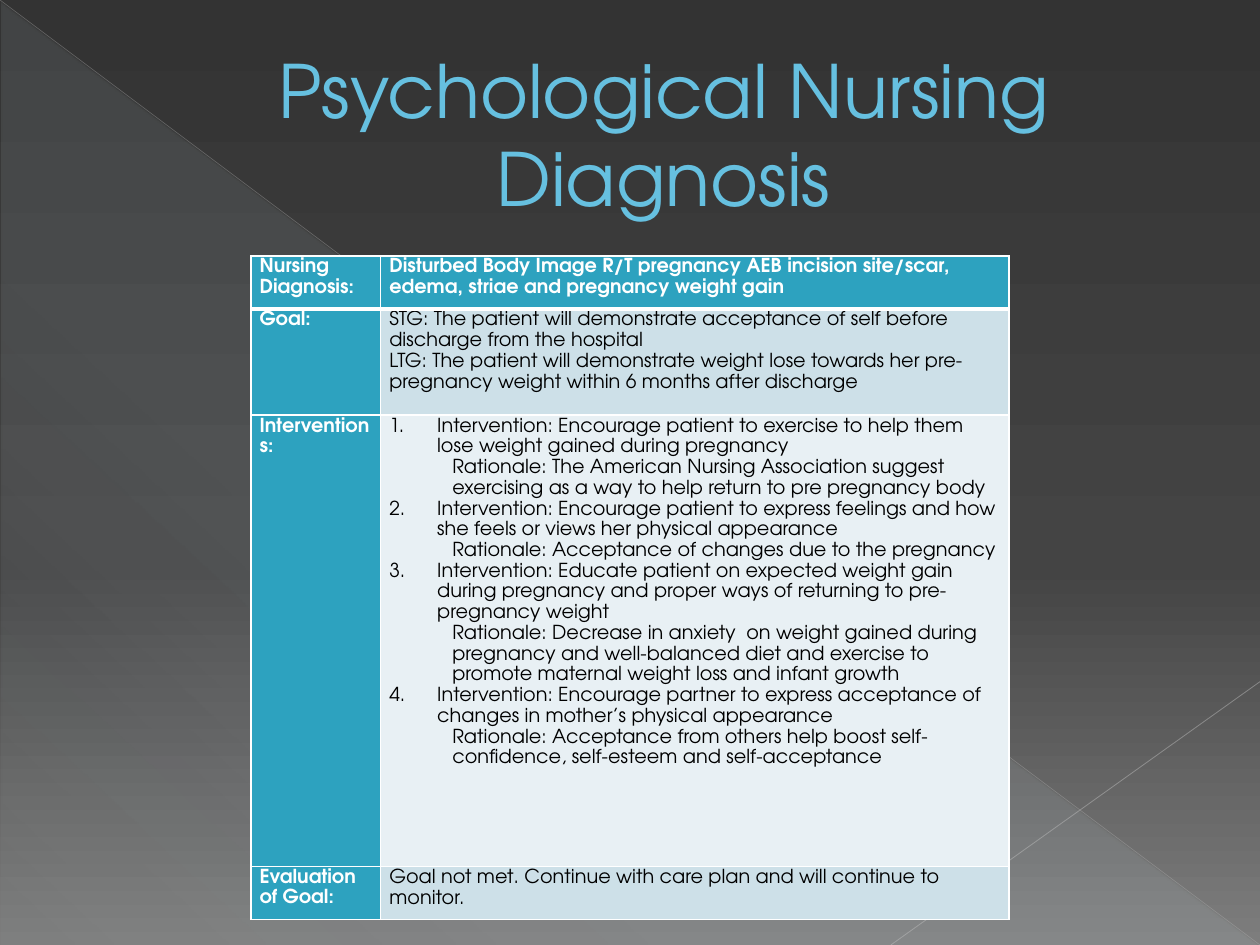
from dataclasses import dataclass

from lxml import etree
from pptx import Presentation
from pptx import util as u
from pptx.dml.color import RGBColor
from pptx.enum import shapes, text
from pptx.oxml.ns import qn

WIDTH, HEIGHT = 10, 7.5
FONT = "TeX Gyre Adventor"
WHITE = RGBColor(0xFF, 0xFF, 0xFF)
BLACK = RGBColor(0, 0, 0)
TITLE_BLUE = RGBColor(0x66, 0xC0, 0xE0)
TEAL = RGBColor(0x2D, 0xA2, 0xBF)
BAND_DARK = RGBColor(0xCD, 0xE0, 0xE8)
BAND_LIGHT = RGBColor(0xE8, 0xF0, 0xF4)
ICE = RGBColor(0xDE, 0xF5, 0xFA)
GREY_LONG = RGBColor(0xB9, 0xB9, 0xB9)
GREY_SHORT = RGBColor(0xC1, 0xC1, 0xC1)
BACKDROP = [RGBColor(0x33, 0x33, 0x33), RGBColor(0x44, 0x44, 0x44),
            RGBColor(0x7D, 0x7D, 0x7D)]
COLUMNS = (1.03, 4.99)


@dataclass
class Stop:
    place: int
    color: RGBColor
    opacity: int = 100


@dataclass
class Ray:
    start: tuple[float, float]  # shares of the slide's width and height
    end: tuple[float, float]
    color: RGBColor
    weight: float
    opacity: int


@dataclass
class Line:
    words: str
    number: int = 0
    left: float = 0


@dataclass
class Row:
    label: list[str]
    lines: list[Line]
    height: float
    fill: RGBColor
    header: bool = False


def add_color(parent, color: RGBColor, opacity: int = 100) -> None:
    node = etree.SubElement(parent, qn("a:srgbClr"), val=str(color))
    if opacity < 100:
        etree.SubElement(node, qn("a:alpha"), val=str(opacity * 1000))


def set_gradient(properties, stops: list[Stop], angle: int) -> None:
    """Replace the solid fill in the properties by a linear gradient."""
    gradient = etree.Element(qn("a:gradFill"), rotWithShape="1")
    listing = etree.SubElement(gradient, qn("a:gsLst"))
    for stop in stops:
        node = etree.SubElement(listing, qn("a:gs"), pos=str(stop.place * 1000))
        add_color(node, stop.color, stop.opacity)
    etree.SubElement(gradient, qn("a:lin"), ang=str(angle * 60000), scaled="0")
    properties.replace(properties.find(qn("a:solidFill")), gradient)


def style(para, size: float, color: RGBColor, bold: bool = False) -> None:
    for span in para.runs:
        span.font.name, span.font.size, span.font.bold = FONT, u.Pt(size), bold
        span.font.color.rgb = color


def draw_ray(page, ray: Ray) -> None:
    ends = [u.Inches(share * side) for point in (ray.start, ray.end)
            for share, side in zip(point, (WIDTH, HEIGHT))]
    line = page.shapes.add_connector(shapes.MSO_CONNECTOR.STRAIGHT, *ends)
    line.line.color.rgb, line.line.width = ray.color, u.Pt(ray.weight)
    properties = line._element.spPr
    color = properties.find(".//" + qn("a:srgbClr"))
    etree.SubElement(color, qn("a:alpha"), val=str(ray.opacity * 1000))
    etree.SubElement(properties, qn("a:effectLst"))


def fill_cell(cell, lines: list[Line], fill: RGBColor, color: RGBColor,
              bold: bool, header: bool) -> None:
    cell.margin_left = cell.margin_right = u.Inches(0.07)
    cell.margin_top = cell.margin_bottom = 0
    properties = cell._tc.get_or_add_tcPr()
    for side in "LRTB":
        weight = 3 if header and side == "B" else 1
        border = etree.SubElement(properties, qn("a:ln" + side), w=str(u.Pt(weight)))
        add_color(etree.SubElement(border, qn("a:solidFill")), WHITE)
    cell.fill.solid()
    cell.fill.fore_color.rgb = fill
    cell.text_frame.text = "\n".join(line.words for line in lines)
    for para, line in zip(cell.text_frame.paragraphs, lines):
        para.line_spacing = 1.15
        style(para, 11, color, bold)
        layout = para._p.get_or_add_pPr()
        layout.set("marL", str(u.Inches(line.left)))
        layout.set("indent", str(u.Inches(-line.left if line.number else 0)))
        if line.number:
            etree.SubElement(layout, qn("a:buFont"), typeface="+mj-lt")
            etree.SubElement(layout, qn("a:buAutoNum"), type="arabicPeriod",
                             startAt=str(line.number))


def draw_table(page, rows: list[Row]) -> None:
    frame = page.shapes.add_table(
        len(rows), len(COLUMNS), u.Inches(1.99), u.Inches(2.03),
        u.Inches(sum(COLUMNS)), u.Inches(sum(row.height for row in rows)))
    table = frame.table
    for column, width in zip(table.columns, COLUMNS):
        column.width = u.Inches(width)
    for index, row in enumerate(rows):
        table.rows[index].height = u.Inches(row.height)
        label = [Line(words) for words in row.label]
        fill_cell(table.cell(index, 0), label, TEAL, WHITE, True, row.header)
        fill_cell(table.cell(index, 1), row.lines, row.fill,
                  WHITE if row.header else BLACK, row.header, row.header)


CARE = [
    ("Encourage patient to exercise to help them lose weight gained during pregnancy",
     "The American Nursing Association suggest exercising as a way to help return "
     "to pre pregnancy body"),
    ("Encourage patient to express feelings and how she feels or views her physical "
     "appearance",
     "Acceptance of changes due to the pregnancy"),
    ("Educate patient on expected weight gain during pregnancy and proper ways of "
     "returning to pre-pregnancy weight",
     "Decrease in anxiety  on weight gained during pregnancy and well-balanced diet "
     "and exercise to promote maternal weight loss and infant growth"),
    ("Encourage partner to express acceptance of changes in mother’s physical appearance",
     "Acceptance from others help boost self-confidence, self-esteem and "
     "self-acceptance"),
]
INTERVENTIONS = [
    line for number, (action, reason) in enumerate(CARE, 1)
    for line in (Line("Intervention: " + action, number, 0.38),
                 Line("Rationale: " + reason, left=0.5))]
ROWS = [
    Row(["Nursing", "Diagnosis:"],
        [Line("Disturbed Body Image R/T pregnancy AEB incision site/scar, edema, "
              "striae and pregnancy weight gain")], 0.42, TEAL, header=True),
    Row(["Goal:"],
        [Line("STG: The patient will demonstrate acceptance of self before discharge "
              "from the hospital"),
         Line("LTG: The patient will demonstrate weight lose towards her pre-pregnancy "
              "weight within 6 months after discharge")], 0.83, BAND_DARK),
    Row(["Interventions:"], INTERVENTIONS, 3.33, BAND_LIGHT),
    Row(["Evaluation of Goal:"],
        [Line("Goal not met. Continue with care plan and will continue to monitor.")],
        0.42, BAND_DARK),
]
RAYS = [Ray((0, 0), (1, 1), GREY_LONG, 0.39, 35),
        Ray((1, 5.41 / HEIGHT), (7.07 / WIDTH, 1), GREY_SHORT, 0.47, 45)]


def main() -> None:
    deck = Presentation()
    deck.slide_width, deck.slide_height = u.Inches(WIDTH), u.Inches(HEIGHT)
    page = deck.slides.add_slide(deck.slide_layouts[6])

    # Backdrop: gradient, pale corner and two thin rays
    page.background.fill.solid()
    set_gradient(page._element.cSld.find(".//" + qn("p:bgPr")),
                 [Stop(*pair) for pair in zip((0, 60, 100), BACKDROP)], 90)
    corner = page.shapes.add_shape(
        shapes.MSO_SHAPE.RIGHT_TRIANGLE, u.Inches(0.01), u.Inches(0.02),
        u.Inches(9.98), u.Inches(7.48))
    corner.shadow.inherit = False
    corner.line.fill.background()
    corner.fill.solid()
    set_gradient(corner._element.spPr,
                 [Stop(0, ICE, 10), Stop(70, ICE, 8), Stop(100, ICE, 1)], 133)
    for ray in RAYS:
        draw_ray(page, ray)

    # Title
    box = page.shapes.add_textbox(u.Inches(0.5), u.Inches(0.29),
                                  u.Inches(9), u.Inches(1.53))
    box.text_frame.word_wrap = True
    box.text_frame.vertical_anchor = text.MSO_ANCHOR.MIDDLE
    box.text_frame.text = "Psychological Nursing Diagnosis"
    para = box.text_frame.paragraphs[0]
    para.alignment = text.PP_ALIGN.CENTER
    para._p.get_or_add_pPr().set("marL", str(u.Inches(0.53)))
    style(para, 42, TITLE_BLUE)

    # Care plan
    draw_table(page, ROWS)
    deck.save("out.pptx")


if __name__ == "__main__":
    main()
